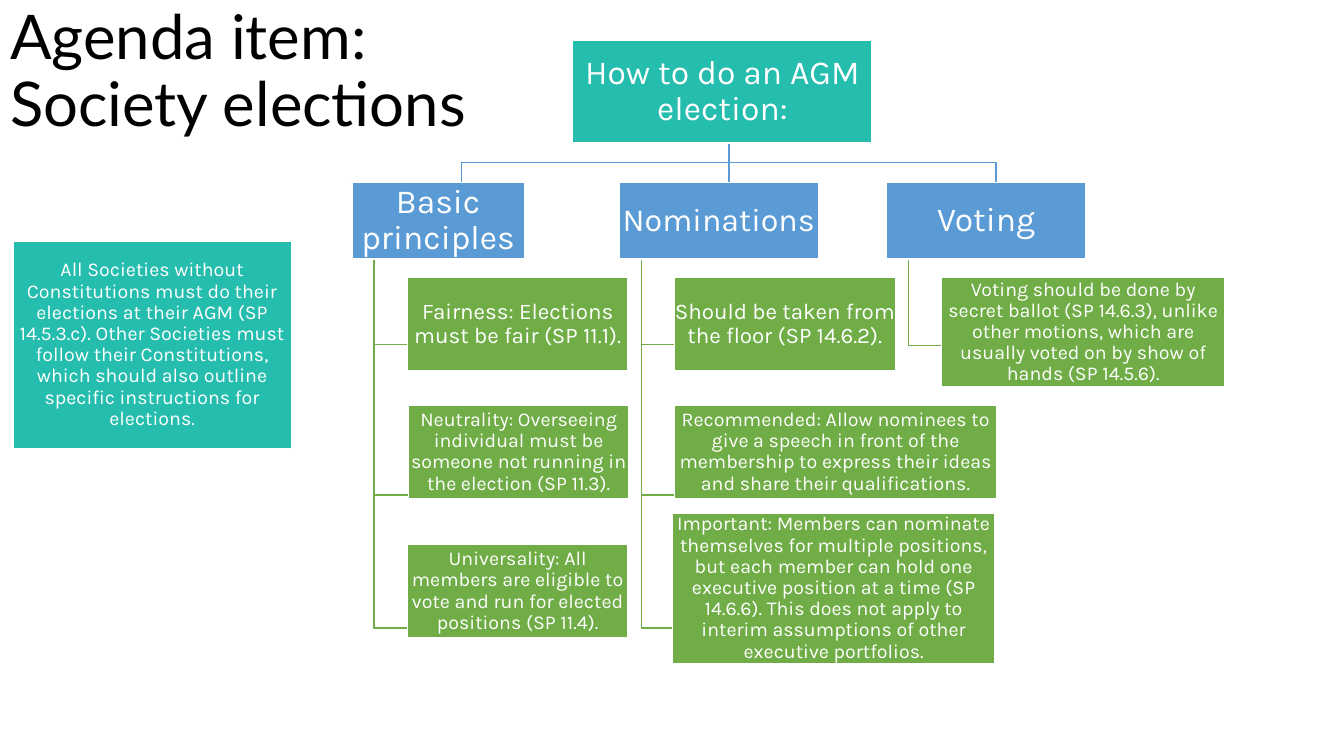
import pptx
import pptx.util
import pptx.dml.color
import pptx.enum.shapes
import pptx.enum.text
from dataclasses import dataclass

Inches = pptx.util.Inches
Pt = pptx.util.Pt


@dataclass(frozen=True)
class Theme:
    teal: str = "25BDAD"
    blue: str = "5B9BD5"
    green: str = "70AD47"
    white: str = "FFFFFF"
    black: str = "000000"
    title_font: str = "Lato"
    body_font: str = "Karla"
    title: int = 44
    heading: int = 24
    heading_long: int = 23
    lead: int = 16
    body: int = 14


THEME = Theme()

COLUMN_X, COLUMN_STEP = 3.49, 2.65
HEADING_TOP, HEADING_H = 1.81, 0.76
STEM_INSET = 0.22
ROOT = (5.68, 0.4, 2.97, 1.02)
ROOT_STEM_X, FORK_Y = 7.23, 1.61

# Each column: heading, width, size, cards.
# Each card: left, top, width, height, branch height on the slide, size, text.
COLUMNS = [
    ("Basic principles", 1.71, THEME.heading, [
        (4.04, 2.75, 2.19, 0.93, 3.42, THEME.lead,
         "Fairness: Elections must be fair (SP 11.1)."),
        (4.05, 4.02, 2.19, 0.93, 4.91, THEME.body,
         "Neutrality: Overseeing individual must be someone not running in "
         "the election (SP 11.3)."),
        (4.04, 5.4, 2.19, 0.93, 6.23, THEME.body,
         "Universality: All members are eligible to vote and run for elected "
         "positions (SP 11.4)."),
    ]),
    ("Nominations", 1.98, THEME.heading_long, [
        (6.69, 2.75, 2.19, 0.93, 3.42, THEME.lead,
         "Should be taken from the floor (SP 14.6.2)."),
        (6.69, 4.02, 3.2, 0.93, 4.91, THEME.body,
         "Recommended: Allow nominees to give a speech in front of the "
         "membership to express their ideas and share their qualifications."),
        (6.67, 5.09, 3.2, 1.49, 6.23, THEME.body,
         "Important: Members can nominate themselves for multiple positions, "
         "but each member can hold one executive position at a time "
         "(SP 14.6.6). This does not apply to interim assumptions of other "
         "executive portfolios."),
    ]),
    ("Voting", 1.98, THEME.heading, [
        (9.34, 2.75, 2.81, 1.09, 3.43, THEME.body,
         "Voting should be done by secret ballot (SP 14.6.3), unlike other "
         "motions, which are usually voted on by show of hands (SP 14.5.6)."),
    ]),
]

SIDE_NOTE = (
    "All Societies without Constitutions must do their elections at their AGM "
    "(SP 14.5.3.c). Other Societies must follow their Constitutions, which "
    "should also outline specific instructions for elections."
)


def rgb(value):
    return pptx.dml.color.RGBColor.from_string(value)


def set_all(obj, values):
    for name, value in values.items():
        setattr(obj, name, value)


def place(sp, left, top, width, height):
    set_all(sp, {"left": Inches(left), "top": Inches(top),
                 "width": Inches(width), "height": Inches(height)})


def write(sp, text, size, font, color, align, inset_x=0, inset_y=0):
    tf = sp.text_frame
    set_all(tf, {
        "word_wrap": True,
        "auto_size": pptx.enum.text.MSO_AUTO_SIZE.NONE,
        "vertical_anchor": pptx.enum.text.MSO_ANCHOR.MIDDLE,
        "margin_left": Inches(inset_x), "margin_right": Inches(inset_x),
        "margin_top": Inches(inset_y), "margin_bottom": Inches(inset_y),
    })
    p = tf.paragraphs[0]
    set_all(p, {"alignment": align, "line_spacing": 0.9})
    r = p.add_run()
    r.text = text
    set_all(r.font, {"name": font, "size": Pt(size)})
    r.font.color.rgb = rgb(color)


def add_title(s, text):
    sp = s.shapes.title
    place(sp, 0, 0, 5.83, 1.45)
    write(sp, text, THEME.title, THEME.title_font, THEME.black,
          pptx.enum.text.PP_ALIGN.LEFT, 0.1, 0.05)


def add_box(s, bounds, text, size, color):
    sp = s.shapes.add_shape(pptx.enum.shapes.MSO_SHAPE.RECTANGLE,
                            *map(Inches, bounds))
    sp.shadow.inherit = False
    sp.fill.solid()
    sp.fill.fore_color.rgb = rgb(color)
    sp.line.color.rgb = rgb(THEME.white)
    sp.line.width = Pt(1)
    write(sp, text, size, THEME.body_font, THEME.white,
          pptx.enum.text.PP_ALIGN.CENTER)


def add_branch(s, points, color):
    """Draw an open line through the points, in inches."""
    start, *rest = [(Inches(x), Inches(y)) for x, y in points]
    builder = s.shapes.build_freeform(*start)
    builder.add_line_segments(rest, close=False)
    sp = builder.convert_to_shape()
    sp.shadow.inherit = False
    sp.fill.background()
    sp.line.color.rgb = rgb(color)
    sp.line.width = Pt(1)


def add_branches(s):
    root_bottom = ROOT[1] + ROOT[3]
    for i, (_, _, _, cards) in enumerate(COLUMNS):
        drop_x = ROOT_STEM_X + (i - 1) * COLUMN_STEP
        add_branch(s, [(ROOT_STEM_X, root_bottom), (ROOT_STEM_X, FORK_Y),
                       (drop_x, FORK_Y), (drop_x, HEADING_TOP)], THEME.blue)
        stem_x = COLUMN_X + i * COLUMN_STEP + STEM_INSET
        for left, _, _, _, branch_y, _, _ in cards:
            add_branch(s, [(stem_x, HEADING_TOP + HEADING_H),
                           (stem_x, branch_y), (left, branch_y)], THEME.green)


def add_columns(s):
    for i, (heading, width, size, cards) in enumerate(COLUMNS):
        add_box(s, (COLUMN_X + i * COLUMN_STEP, HEADING_TOP, width, HEADING_H),
                heading, size, THEME.blue)
        for *bounds, _, card_size, text in cards:
            add_box(s, bounds, text, card_size, THEME.green)


def main():
    prs = pptx.Presentation()
    set_all(prs, {"slide_width": Inches(13.33), "slide_height": Inches(7.5)})
    s = prs.slides.add_slide(prs.slide_layouts.get_by_name("Title Only"))
    add_title(s, "Agenda item: Society elections")
    add_branches(s)
    add_box(s, (0.13, 2.39, 2.76, 2.06), SIDE_NOTE, THEME.body, THEME.teal)
    add_box(s, ROOT, "How to do an AGM election:", THEME.heading, THEME.teal)
    add_columns(s)
    prs.save("out.pptx")


if __name__ == "__main__":
    main()
